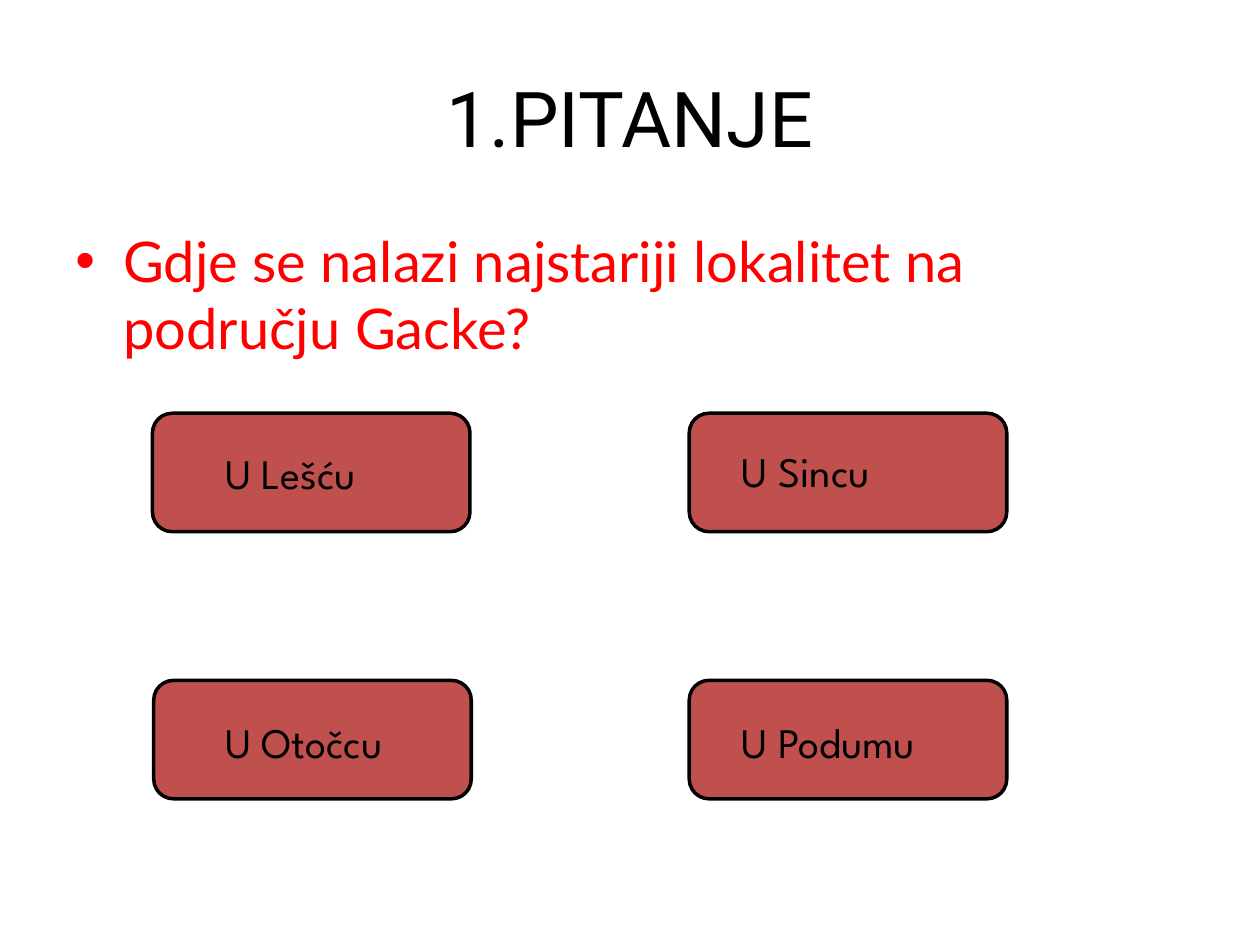
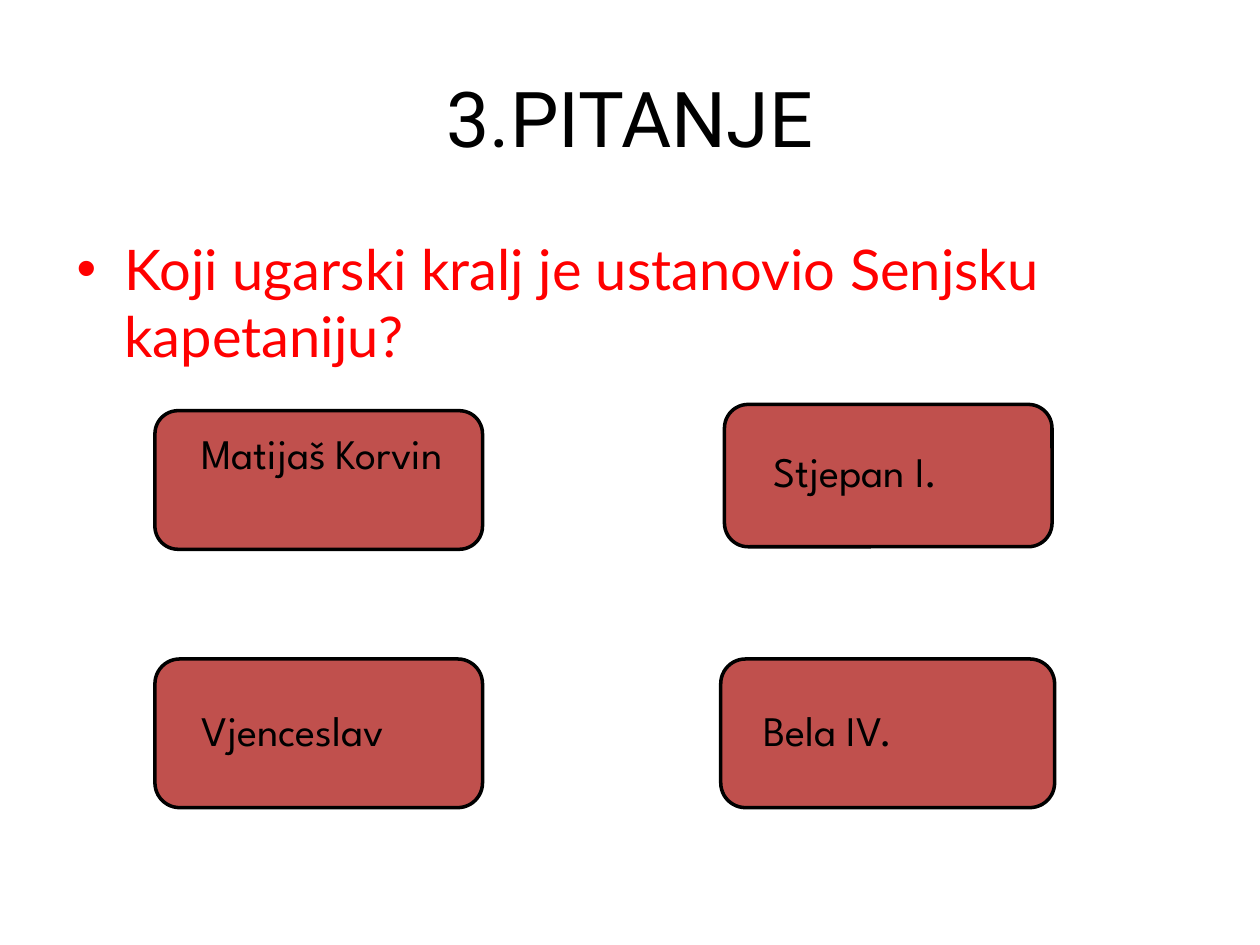
from dataclasses import dataclass

from lxml import etree
from pptx import Presentation
from pptx.dml.color import RGBColor
from pptx.enum.shapes import MSO_SHAPE
from pptx.enum.text import MSO_ANCHOR, MSO_AUTO_SIZE, PP_ALIGN
from pptx.oxml.ns import qn
from pptx.util import Inches, Pt

CARD_SHAPE = MSO_SHAPE.FLOWCHART_ALTERNATE_PROCESS
CENTER = PP_ALIGN.CENTER
MIDDLE = MSO_ANCHOR.MIDDLE
TOP = MSO_ANCHOR.TOP
GROW = MSO_AUTO_SIZE.SHAPE_TO_FIT_TEXT
TITLE_ONLY = 5


@dataclass(frozen=True)
class Theme:
    ink: RGBColor = RGBColor(0, 0, 0)
    question: RGBColor = RGBColor(255, 0, 0)
    card: RGBColor = RGBColor(0xC0, 0x50, 0x4D)
    title_font: str = "Roboto"
    question_font: str = "Lato"
    answer_font: str = "League Spartan"
    title_size: int = 44
    question_size: int = 32
    answer_size: int = 24
    border: int = 2


def inches(box):
    return [Inches(value) for value in box]


class QuizDeck:
    def __init__(self, theme):
        self.theme = theme
        self.presentation = Presentation()
        self.presentation.slide_width = Inches(10)
        self.presentation.slide_height = Inches(7.5)
        self.slide = None

    def style(self, paragraph, name, size, color):
        paragraph.font.name = name
        paragraph.font.size = Pt(size)
        paragraph.font.color.rgb = color

    def add_slide(self, title):
        layout = self.presentation.slide_layouts[TITLE_ONLY]
        self.slide = self.presentation.slides.add_slide(layout)
        shape = self.slide.shapes.title
        shape.left, shape.top, shape.width, shape.height = inches((0.5, 0.3, 9, 1.25))
        shape.text_frame.text = title
        shape.text_frame.vertical_anchor = MIDDLE
        paragraph = shape.text_frame.paragraphs[0]
        paragraph.alignment = CENTER
        self.style(paragraph, self.theme.title_font, self.theme.title_size, self.theme.ink)

    def add_text(self, shapes, text, box):
        shape = shapes.add_textbox(*inches(box))
        shape.text_frame.word_wrap = True
        shape.text_frame.vertical_anchor = TOP
        shape.text_frame.text = text
        return shape

    def add_question(self, text, left, top):
        shape = self.add_text(self.slide.shapes, text, (left, top, 9, 4.95))
        paragraph = shape.text_frame.paragraphs[0]
        properties = paragraph._p.get_or_add_pPr()
        properties.set("marL", str(Inches(0.38)))
        properties.set("indent", str(Inches(-0.38)))
        etree.SubElement(properties, qn("a:buFont"), typeface="Arial")
        etree.SubElement(properties, qn("a:buChar"), char="•")
        self.style(paragraph, self.theme.question_font, self.theme.question_size, self.theme.question)

    def add_answer(self, text, card_box, label_box, filled_label=False):
        shapes = self.slide.shapes.add_group_shape().shapes
        card = shapes.add_shape(CARD_SHAPE, *inches(card_box))
        card.shadow.inherit = False
        card.fill.solid()
        card.fill.fore_color.rgb = self.theme.card
        card.line.color.rgb = self.theme.ink
        card.line.width = Pt(self.theme.border)
        label = self.add_text(shapes, text, label_box)
        label.text_frame.auto_size = GROW
        if filled_label:
            label.fill.solid()
            label.fill.fore_color.rgb = self.theme.card
        self.style(label.text_frame.paragraphs[0], self.theme.answer_font,
                   self.theme.answer_size, self.theme.ink)


def add_site_question(deck):
    deck.add_slide("1.PITANJE")
    deck.add_question("Gdje se nalazi najstariji lokalitet na području Gacke?", 0.5, 1.75)
    answers = [
        ("U Lešću", 1.21, 3.28, (1.69, 3.5, 1.5, 0.5)),
        ("U Sincu", 5.47, 3.28, (5.79, 3.49, 2.2, 0.5)),
        ("U Otočcu", 1.22, 5.4, (1.69, 5.64, 1.81, 0.5)),
        ("U Podumu", 5.47, 5.4, (5.79, 5.64, 1.97, 0.5)),
    ]
    for text, left, top, label_box in answers:
        deck.add_answer(text, (left, top, 2.52, 0.94), label_box)


def add_king_question(deck):
    deck.add_slide("3.PITANJE")
    deck.add_question("Koji ugarski kralj je ustanovio Senjsku kapetaniju?", 0.51, 1.81)
    deck.add_answer("Matijaš Korvin", (1.23, 3.26, 2.6, 1.1), (1.5, 3.34, 2.36, 0.91))
    deck.add_answer("Stjepan I.", (5.75, 3.21, 2.6, 1.13), (6.04, 3.49, 1.89, 0.5))
    deck.add_answer("Vjenceslav", (1.23, 5.23, 2.6, 1.18), (1.5, 5.54, 2.01, 0.5))
    deck.add_answer("Bela IV.", (5.72, 5.23, 2.65, 1.18), (5.96, 5.54, 2.13, 0.5),
                    filled_label=True)


def main():
    deck = QuizDeck(Theme())
    add_site_question(deck)
    add_king_question(deck)
    deck.presentation.save("out.pptx")


if __name__ == "__main__":
    main()
